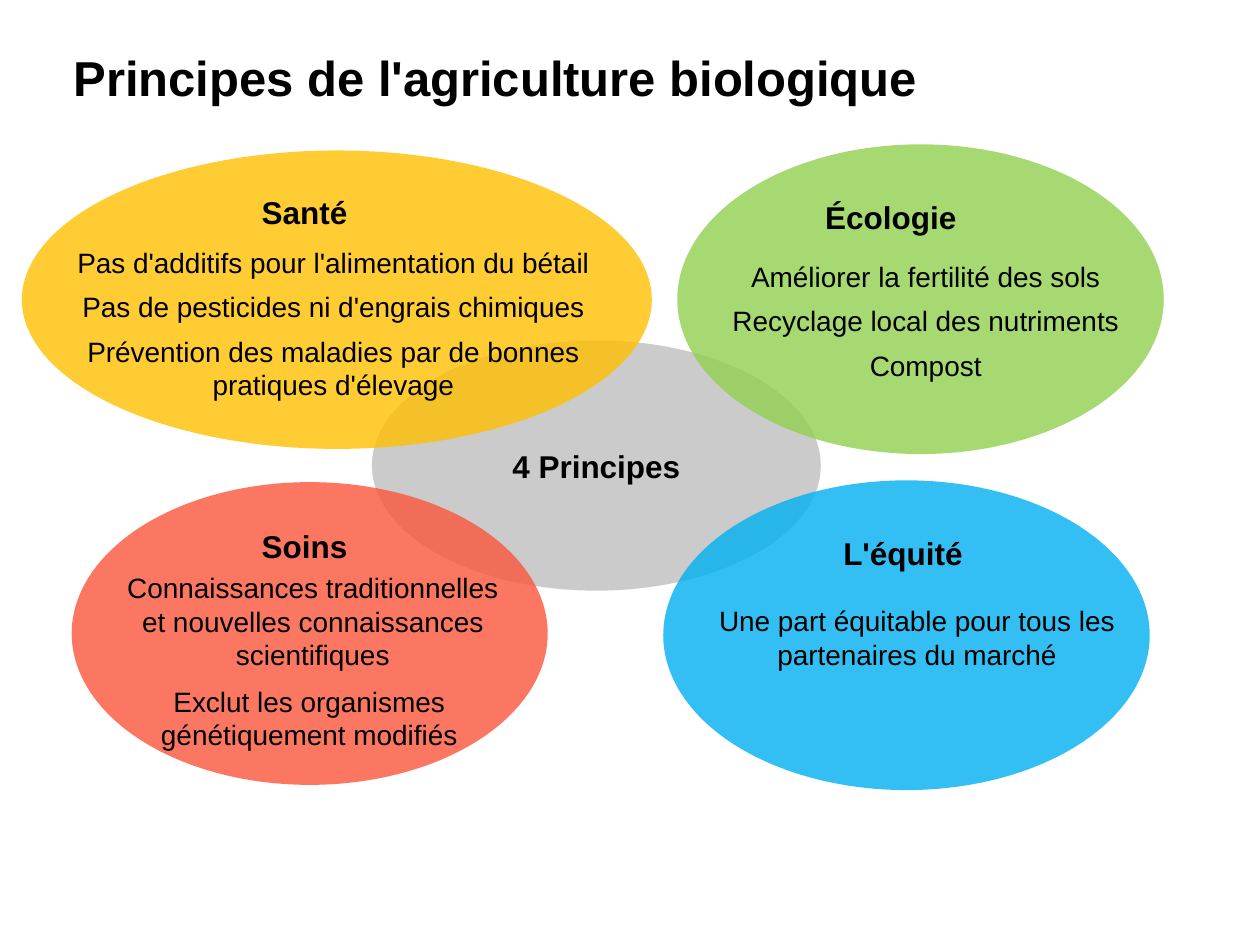
from lxml import etree
from pptx import Presentation
from pptx.dml.color import RGBColor
from pptx.enum.shapes import MSO_SHAPE as Shape
from pptx.enum.text import MSO_ANCHOR as Anchor, PP_ALIGN as Align
from pptx.oxml.ns import qn
from pptx.util import Pt

BLACK = RGBColor(0x00, 0x00, 0x00)
GRAY = RGBColor(0xBF, 0xBF, 0xBF)
BLUE = RGBColor(0x00, 0xB0, 0xF0)
RED = RGBColor(0xFB, 0x56, 0x3B)
AMBER = RGBColor(0xFF, 0xC0, 0x00)
GREEN = RGBColor(0x92, 0xD0, 0x50)


def write(tf, *lines, size=16, bold=False, align=Align.CENTER, gap=6,
          font="Arial", color=BLACK):
    """Fill a text frame, one paragraph per line, with a gap between them."""
    tf.word_wrap = True
    for i, line in enumerate(lines):
        p = tf.paragraphs[0] if i == 0 else tf.add_paragraph()
        p.alignment = align
        if i:
            p.space_before = Pt(gap)
        r = p.add_run()
        r.text = line
        r.font.name = font
        r.font.size = Pt(size)
        r.font.bold = bold
        r.font.color.rgb = color


class Deck:
    """Holds the slide style and the current slide; lengths are points."""
    title_size, heading_size, body_size = 28, 18, 16
    opacity = 80
    heading_width, heading_height = 131, 29

    def __init__(self, width, height):
        self.prs = Presentation()
        self.prs.slide_width, self.prs.slide_height = Pt(width), Pt(height)
        self.s = self.prs.slides.add_slide(self.prs.slide_layouts[6])

    def box(self, x, y, w, h):
        return self.s.shapes.add_textbox(Pt(x), Pt(y), Pt(w), Pt(h)).text_frame

    def title(self, text, x, y, w, h):
        tf = self.box(x, y, w, h)
        tf.vertical_anchor = Anchor.MIDDLE
        tf.margin_left = tf.margin_top = 0
        write(tf, text, size=self.title_size, bold=True, align=Align.LEFT)

    def ellipse(self, color, x, y, w, h, text=None):
        sp = self.s.shapes.add_shape(Shape.OVAL, Pt(x), Pt(y), Pt(w), Pt(h))
        sp.shadow.inherit = False
        sp.line.fill.background()
        sp.fill.solid()
        sp.fill.fore_color.rgb = color
        clr = sp.fill._xPr.find(qn("a:solidFill"))[0]
        etree.SubElement(clr, qn("a:alpha"), val=str(self.opacity * 1000))
        if text:
            sp.text_frame.vertical_anchor = Anchor.MIDDLE
            write(sp.text_frame, text, size=self.heading_size, bold=True)

    def heading(self, text, x, y):
        tf = self.box(x, y, self.heading_width, self.heading_height)
        write(tf, text, size=self.heading_size, bold=True)

    def body(self, lines, x, y, w, h):
        write(self.box(x, y, w, h), *lines, size=self.body_size)


# Each principle: colour, ellipse, heading and its corner, body texts and boxes
PRINCIPLES = [
    (BLUE, (379, 274.5, 278, 177), ("L'équité", 450.5, 301.5),
     [(["Une part équitable pour tous les partenaires du marché"],
       (365.5, 341.5, 317, 35))]),
    (RED, (41, 275.5, 272, 173), ("Soins", 108.5, 297.5),
     [(["Connaissances traditionnelles et nouvelles connaissances scientifiques"],
       (65, 322.5, 227.5, 62)),
      (["Exclut les organismes génétiquement modifiés"],
       (60.5, 387.5, 232.5, 60))]),
    (AMBER, (12.5, 86, 360, 170.5), ("Santé", 108.5, 106.5),
     [(["Pas d'additifs pour l'alimentation du bétail",
        "Pas de pesticides ni d'engrais chimiques",
        "Prévention des maladies par de bonnes pratiques d'élevage"],
       (31, 137, 319, 169))]),
    (GREEN, (387, 82.5, 278, 177), ("Écologie", 443.5, 109.5),
     [(["Améliorer la fertilité des sols",
        "Recyclage local des nutriments",
        "Compost"],
       (390, 145, 278, 97))]),
]


def main():
    deck = Deck(720, 540)
    deck.title("Principes de l'agriculture biologique", 42, 18, 649, 55)

    # Centre first, then the four ellipses that overlap it
    deck.ellipse(GRAY, 212.5, 194.5, 256.5, 143, "4 Principes")
    for color, frame, _, _ in PRINCIPLES:
        deck.ellipse(color, *frame)

    # Texts above the ellipses
    for _, _, heading, bodies in PRINCIPLES:
        deck.heading(*heading)
        for lines, frame in bodies:
            deck.body(lines, *frame)

    deck.prs.save("out.pptx")


if __name__ == "__main__":
    main()
